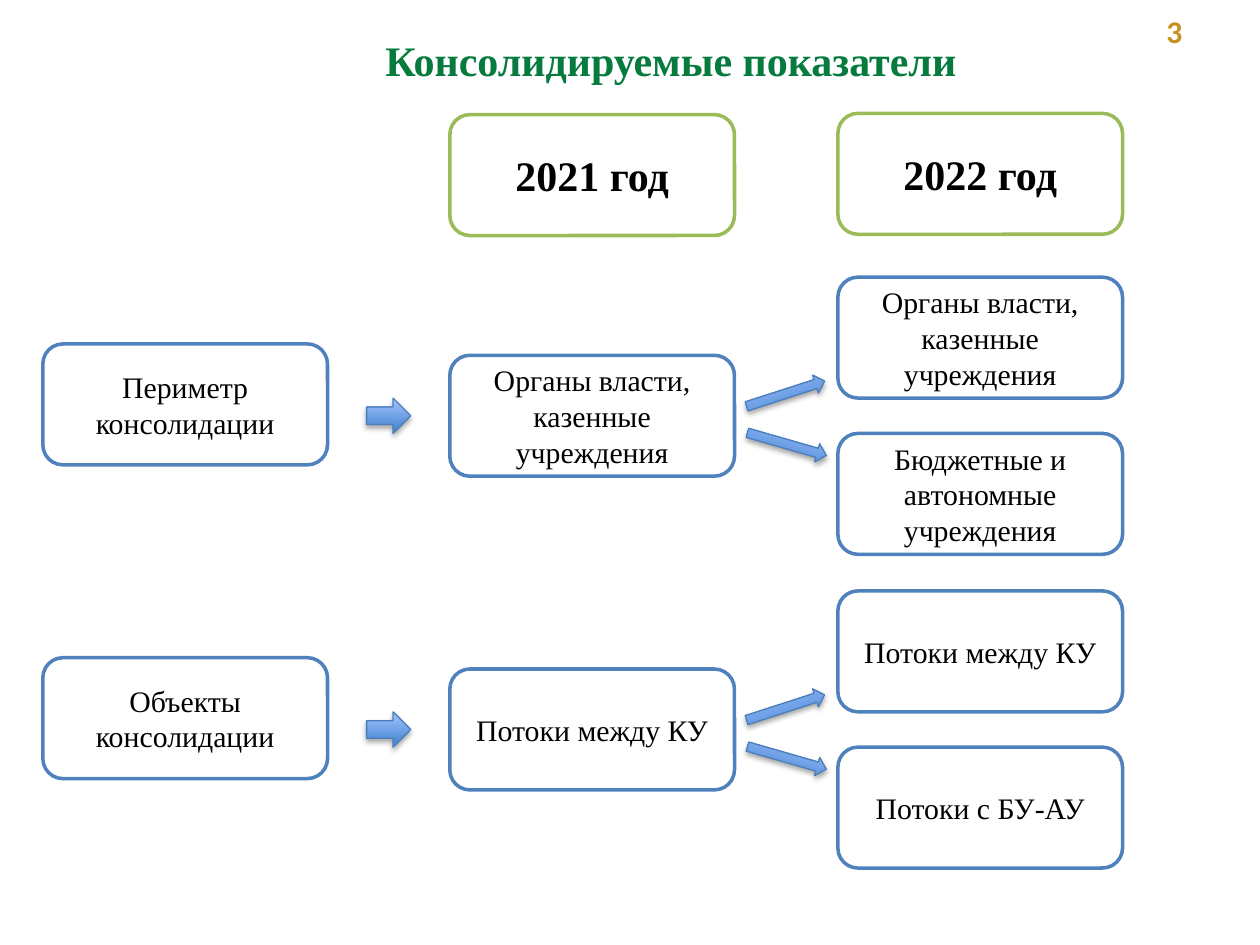
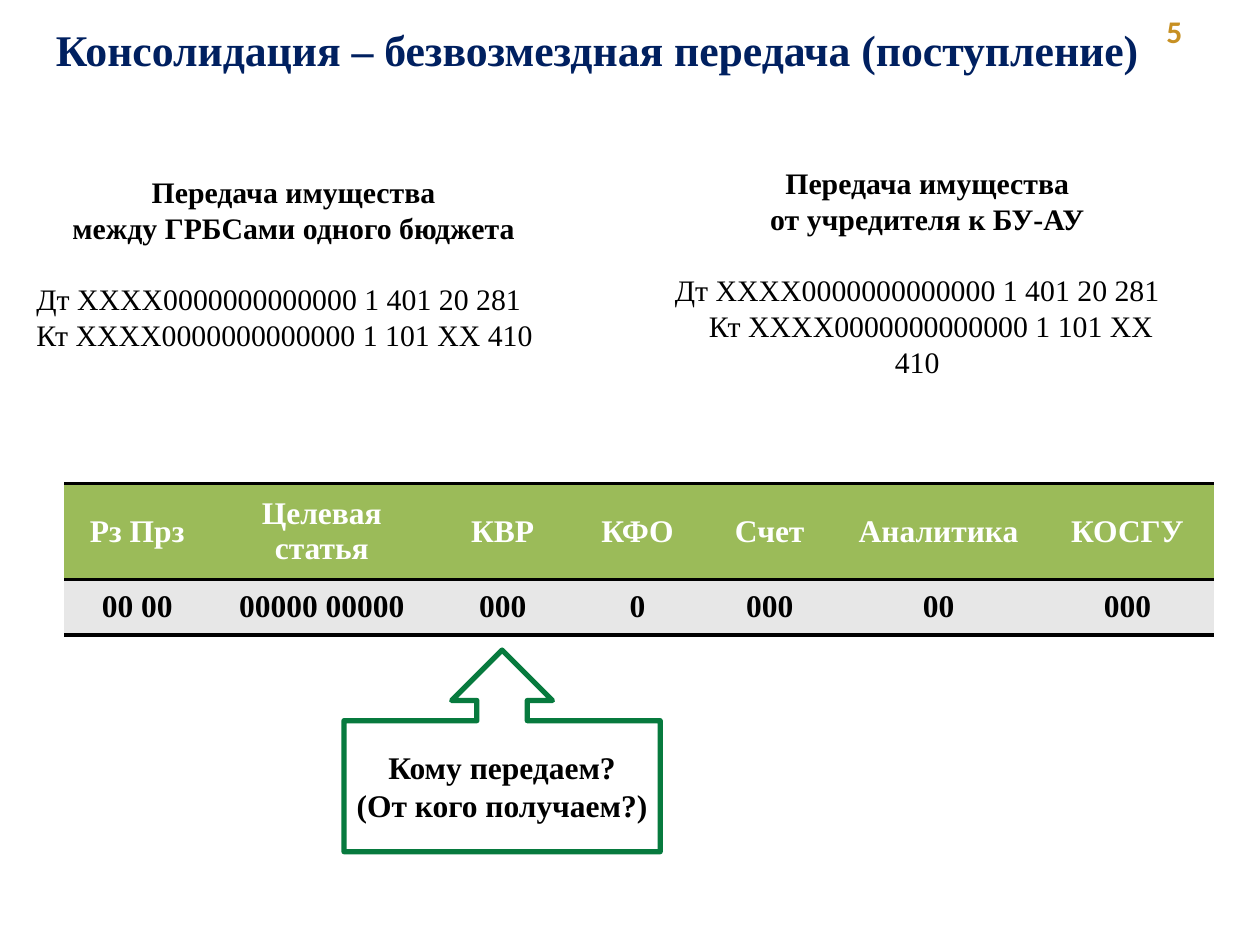
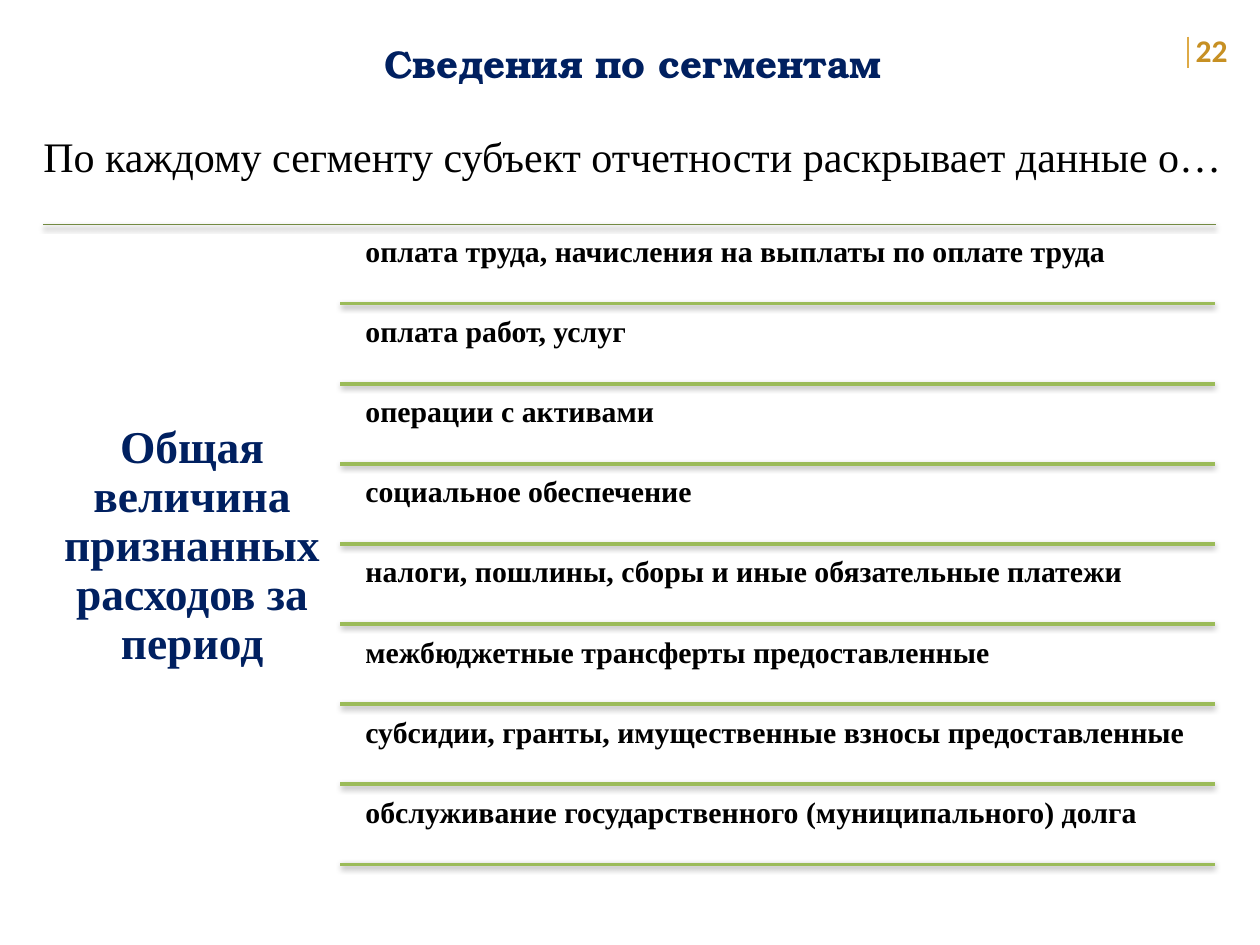
"""Builds three slides on consolidated public-sector reporting."""
from dataclasses import dataclass, replace

from lxml import etree
from pptx import Presentation
from pptx import util as u
from pptx.dml.color import RGBColor
from pptx.enum import shapes as sh, text as tx
from pptx.oxml import ns

HUES = {
    "black": "000000", "white": "FFFFFF", "navy": "002060", "green": "077A3E",
    "lime": "9BBB59", "olive": "738A42", "blue": "4F81BD", "edge": "4B7EBC",
    "deep": "3F80CE", "pale": "A4C4FF", "gold": "C79023", "amber": "DEAA46",
    "grey": "E7E7E7",
}
SERIF = "Times New Roman"
MID = tx.MSO_ANCHOR.MIDDLE
TOP = tx.MSO_ANCHOR.TOP
LEFT = tx.PP_ALIGN.LEFT
CENTER = tx.PP_ALIGN.CENTER


@dataclass(frozen=True)
class Style:
    size: float
    hue: str = "black"
    bold: bool = False
    font: str = SERIF


@dataclass(frozen=True)
class Para:
    words: str
    style: Style
    align: int = CENTER
    before: float = 0
    right: float = 0
    first: float = 0
    pitch: float = 1.0


@dataclass(frozen=True)
class Area:
    left: float
    top: float
    width: float
    height: float

    def spots(self) -> list:
        return [u.Inches(v) for v in (self.left, self.top, self.width, self.height)]


@dataclass(frozen=True)
class Box:
    area: Area
    words: str
    style: Style
    edge: str = "blue"


@dataclass(frozen=True)
class Arrow:
    area: Area
    turn: float = 0


@dataclass(frozen=True)
class Shade:
    alpha: int
    dist: float


PLAIN = Style(17)
STRONG = Style(17, bold=True)
YEAR = Style(24, bold=True)
CODE = Style(18, bold=True)
HEAD = replace(CODE, hue="white")
SOFT = Shade(35, 1.8)
FAINT = Shade(38, 1.6)


def rgb(name: str) -> RGBColor:
    return RGBColor.from_string(HUES[name])


def write(frame, paras: list, anchor=TOP, inset: float | None = None) -> None:
    frame.word_wrap = True
    frame.vertical_anchor = anchor
    if inset is not None:
        frame.margin_left = frame.margin_right = u.Inches(inset)
        frame.margin_top = frame.margin_bottom = u.Inches(inset)
    for i, para in enumerate(paras):
        item = frame.add_paragraph() if i else frame.paragraphs[0]
        item.alignment = para.align
        item.line_spacing = para.pitch
        if para.before:
            item.space_before = u.Pt(para.before)
        for key, size in (("marR", para.right), ("indent", para.first)):
            if size:
                item._p.get_or_add_pPr().set(key, str(u.Inches(size)))
        run = item.add_run()
        run.text = para.words
        run.font.size = u.Pt(para.style.size)
        run.font.bold = para.style.bold
        run.font.name = para.style.font
        run.font.color.rgb = rgb(para.style.hue)


def label(slide, area: Area, paras: list, anchor=TOP, inset: float | None = None):
    box = slide.shapes.add_textbox(*area.spots())
    write(box.text_frame, paras, anchor, inset)
    return box


def start(deck, title: Para, area: Area, page: str, spot: Area):
    slide = deck.slides.add_slide(deck.slide_layouts.get_by_name("Title Only"))
    head = slide.shapes.title
    head.left, head.top, head.width, head.height = area.spots()
    write(head.text_frame, [title])
    head.text_frame.auto_size = tx.MSO_AUTO_SIZE.SHAPE_TO_FIT_TEXT
    label(slide, spot, [Para(page, Style(18, "gold", True, "Calibri"), LEFT)])
    return slide


def shade(shape, cast: Shade | None) -> None:
    props = shape._element.spPr
    for old in props.findall(ns.qn("a:effectLst")):
        props.remove(old)
    group = etree.SubElement(props, ns.qn("a:effectLst"))
    if cast:
        drop = etree.SubElement(group, ns.qn("a:outerShdw"), blurRad=str(u.Pt(3.1)),
                                dist=str(u.Pt(cast.dist)), dir="5400000", rotWithShape="0")
        tint = etree.SubElement(drop, ns.qn("a:srgbClr"), val=HUES["black"])
        etree.SubElement(tint, ns.qn("a:alpha"), val=str(cast.alpha * 1000))


def frame(slide, kind, area: Area, edge: str, weight: float):
    shape = slide.shapes.add_shape(kind, *area.spots())
    shape.shadow.inherit = False
    shape.fill.solid()
    shape.fill.fore_color.rgb = rgb("white")
    shape.line.color.rgb = rgb(edge)
    shape.line.width = u.Pt(weight)
    return shape


def card(slide, box: Box) -> None:
    shape = frame(slide, sh.MSO_SHAPE.ROUNDED_RECTANGLE, box.area, box.edge, 2)
    write(shape.text_frame, [Para(box.words, box.style)], MID)


def point(slide, arrow: Arrow) -> None:
    shape = frame(slide, sh.MSO_SHAPE.RIGHT_ARROW, arrow.area, "edge", 0.75)
    shape.fill.gradient()
    shape.fill.gradient_angle = 90
    for stop, place, hue in zip(shape.fill.gradient_stops, (0, 1), ("deep", "pale")):
        stop.position = place
        stop.color.rgb = rgb(hue)
    shape.rotation = arrow.turn
    shade(shape, SOFT)


def rule(slide, ends: tuple, hue: str, weight: float, cast: Shade | None = None) -> None:
    line = slide.shapes.add_connector(sh.MSO_CONNECTOR.STRAIGHT, *map(u.Inches, ends))
    line.line.color.rgb = rgb(hue)
    line.line.width = u.Pt(weight)
    shade(line, cast)


def trim(cell, fill: str) -> None:
    cell.fill.solid()
    cell.fill.fore_color.rgb = rgb(fill)
    props = cell._tc.get_or_add_tcPr()
    for i, side in enumerate(("lnL", "lnR", "lnT", "lnB")):
        line = etree.Element(ns.qn(f"a:{side}"), w=str(u.Pt(2)))
        if side in ("lnT", "lnB"):
            paint = etree.SubElement(line, ns.qn("a:solidFill"))
            etree.SubElement(paint, ns.qn("a:srgbClr"), val=HUES["black"])
        else:
            etree.SubElement(line, ns.qn("a:noFill"))
        props.insert(i, line)


def scope(deck) -> None:
    """Compares what is consolidated in each year."""
    slide = start(deck, Para("Консолидируемые показатели", Style(24, "green", True)),
                  Area(1.47, 0.22, 7.71, 0.52), "3", Area(9.16, 0.05, 0.66, 0.4))
    cols = (0.34, 3.57, 6.65)
    for left, top, year in ((cols[1], 0.91, "2021 год"), (cols[2], 0.9, "2022 год")):
        card(slide, Box(Area(left, top, 2.26, 0.96), year, YEAR, "lime"))
    places = ((cols[0], 2.73), (cols[1], 2.82), (cols[2], 2.2), (cols[2], 3.44))
    arrows = (Arrow(Area(2.91, 3.16, 0.35, 0.28)),
              Arrow(Area(5.91, 3.05, 0.65, 0.15), 342.1),
              Arrow(Area(5.92, 3.45, 0.65, 0.15), 16))
    bands = (
        ("Периметр консолидации", "Органы власти, казенные учреждения",
         "Органы власти, казенные учреждения", "Бюджетные и автономные учреждения"),
        ("Объекты консолидации", "Потоки между КУ", "Потоки между КУ", "Потоки с БУ-АУ"),
    )
    for i, band in enumerate(bands):
        drop = 2.49 * i
        for (left, top), words in zip(places, band):
            card(slide, Box(Area(left, top + drop, 2.26, 0.96), words, PLAIN))
        for arrow in arrows:
            point(slide, replace(arrow, area=replace(arrow.area, top=arrow.area.top + drop)))


def transfer(deck) -> None:
    """Shows the entries and account code of a free transfer."""
    slide = start(deck, Para("Консолидация – безвозмездная передача (поступление)",
                             Style(25, "navy", True)),
                  Area(0.31, 0.13, 8.86, 0.52), "5", Area(9.16, 0.05, 0.66, 0.4))
    debit = Para("Дт ХХХХ0000000000000 1 401 20 281", PLAIN, LEFT, before=20.5)
    credit = Para("Кт ХХХХ0000000000000 1 101 ХХ 410", PLAIN, LEFT)
    notes = (
        (Area(0.19, 1.33, 4.28, 1.53), "между ГРБСами одного бюджета", debit, credit),
        (Area(5.23, 1.26, 4.26, 1.67), "от учредителя к БУ-АУ",
         replace(debit, align=CENTER, right=0.16), replace(credit, align=CENTER, first=0.22)),
    )
    for area, whom, *posts in notes:
        heads = [Para(words, STRONG) for words in ("Передача имущества", whom)]
        label(slide, area, heads + posts)

    parts = (("Рз Прз", "00 00", 1.16), ("Целевая статья", "00000 00000", 1.77),
             ("КВР", "000", 1.1), ("КФО", "0", 1.04), ("Счет", "000", 1.06),
             ("Аналитика", "00", 1.62), ("КОСГУ", "000", 1.38))
    grid = slide.shapes.add_table(2, len(parts), *Area(0.51, 3.84, 9.13, 1.2).spots()).table
    for row, height in zip(grid.rows, (0.76, 0.44)):
        row.height = u.Inches(height)
    for i, (name, code, width) in enumerate(parts):
        grid.columns[i].width = u.Inches(width)
        for j, (words, style, fill) in enumerate(((name, HEAD, "lime"), (code, CODE, "grey"))):
            cell = grid.cell(j, i)
            write(cell.text_frame, [Para(words, style)])
            cell.vertical_anchor = MID
            trim(cell, fill)

    call = frame(slide, sh.MSO_SHAPE.UP_ARROW_CALLOUT, Area(2.73, 5.16, 2.51, 1.6), "green", 3)
    asks = ("Кому передаем?", "(От кого получаем?)")
    write(call.text_frame, [Para(words, CODE) for words in asks], MID)


def segments(deck) -> None:
    """Lists the costs shown for each segment."""
    slide = start(deck, Para("Сведения по сегментам", Style(22, "navy", True, "TeX Gyre Bonum")),
                  Area(1.53, 0.27, 6.99, 0.47), "22", Area(9.39, 0.2, 0.61, 0.4))
    rule(slide, (9.43, 0.29, 9.43, 0.54), "amber", 1)
    label(slide, Area(0.21, 0.99, 9.62, 0.5),
          [Para("По каждому сегменту субъект отчетности раскрывает данные о…", Style(24))])
    rule(slide, (0.34, 1.78, 9.65, 1.78), "olive", 0.75, SOFT)
    label(slide, Area(0.34, 1.78, 2.37, 5.12),
          [Para("Общая величина признанных расходов за период", Style(26, "navy", True),
                pitch=0.9)], MID, 0.11)
    costs = (
        "оплата труда, начисления на выплаты по оплате труда",
        "оплата работ, услуг",
        "операции с активами",
        "социальное обеспечение",
        "налоги, пошлины, сборы и иные обязательные платежи",
        "межбюджетные трансферты предоставленные",
        "субсидии, гранты, имущественные взносы предоставленные",
        "обслуживание государственного (муниципального) долга",
    )
    step = 4.45 / (len(costs) - 1)
    for i, cost in enumerate(costs):
        top = 1.81 + step * i
        label(slide, Area(2.83, top, 6.81, 0.61),
              [Para(cost, STRONG, LEFT, pitch=0.9)], inset=0.07)
        rule(slide, (2.7, top + 0.6, 9.64, top + 0.6), "lime", 2, FAINT)


def main() -> None:
    deck = Presentation()
    deck.slide_width, deck.slide_height = u.Inches(10), u.Inches(7.5)
    for build in (scope, transfer, segments):
        build(deck)
    deck.save("out.pptx")


if __name__ == "__main__":
    main()
